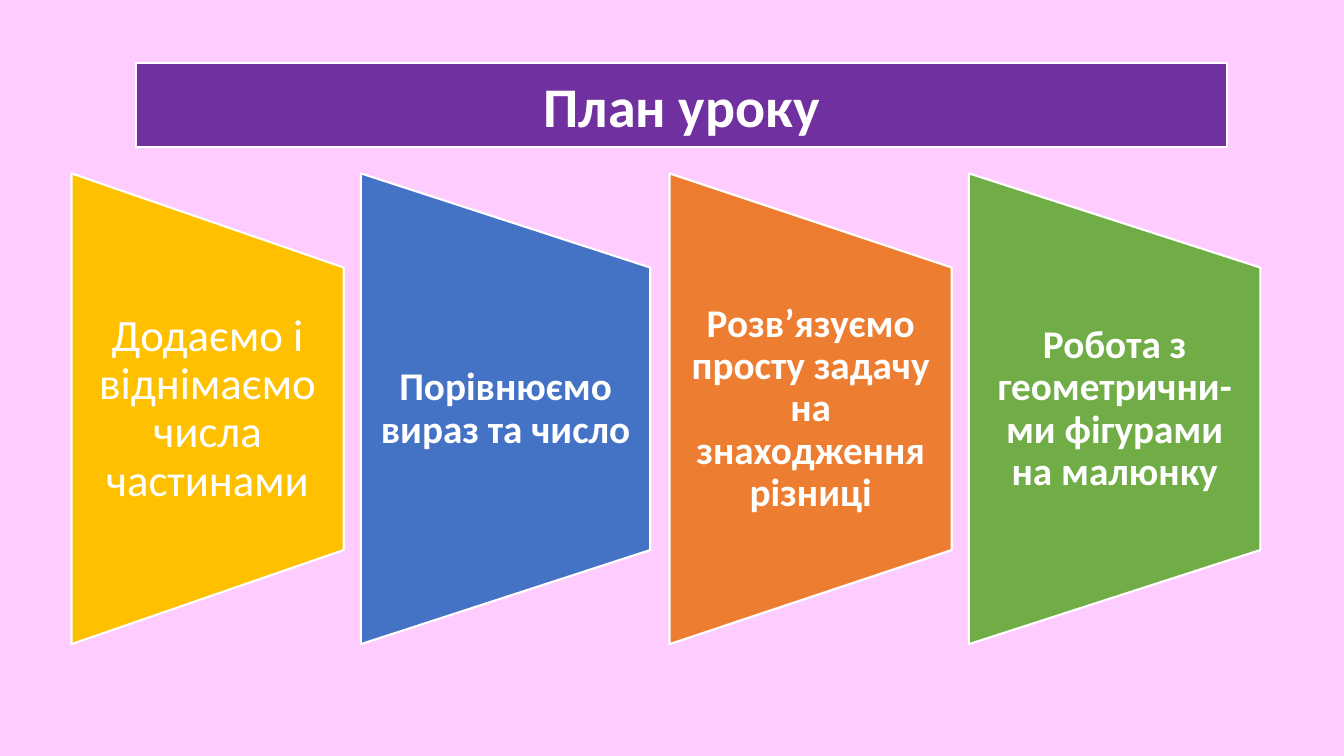
from dataclasses import dataclass

from pptx import Presentation
from pptx.dml.color import RGBColor
from pptx.enum.shapes import MSO_SHAPE
from pptx.enum.text import MSO_ANCHOR, MSO_AUTO_SIZE, PP_ALIGN
from pptx.util import Pt

PX = 9144  # EMU in one px: 100 px to the inch
TRAPEZOID = MSO_SHAPE.FLOWCHART_MANUAL_OPERATION
CENTER = PP_ALIGN.CENTER
MIDDLE = MSO_ANCHOR.MIDDLE
FIT_SHAPE = MSO_AUTO_SIZE.SHAPE_TO_FIT_TEXT
TITLE_ONLY = 5


@dataclass(frozen=True)
class Theme:
    font: str = "Calibri"
    background: str = "FFCCFF"
    banner: str = "7030A0"
    white: str = "FFFFFF"
    yellow: str = "FFC000"
    blue: str = "4472C4"
    orange: str = "ED7D31"
    green: str = "70AD47"
    title_size: int = 40
    large_size: int = 32
    step_size: int = 28
    outline: float = 1.5


THEME = Theme()
PANEL_TOP, PANEL_HEIGHT = 172, 467
TEXT_TOP, TEXT_HEIGHT = 266, 280

# left, width, colour, text, size, bold, side inset
STEPS = [
    (71, 270, THEME.yellow, "Додаємо і віднімаємо числа частинами",
     THEME.large_size, False, 22),
    (358, 287, THEME.blue, "Порівнюємо вираз та число",
     THEME.step_size, True, 19),
    (664, 280, THEME.orange, "Розв’язуємо просту задачу на знаходження різниці",
     THEME.step_size, True, 19),
    (961, 289, THEME.green, "Робота з геометрични-ми фігурами на малюнку",
     THEME.step_size, True, 19),
]


def px(*lengths):
    return [round(length * PX) for length in lengths]


def set_all(target, values):
    for name, value in values.items():
        setattr(target, name, value)


def paint(s, colour):
    """Give a shape its fill and the white outline."""
    s.fill.solid()
    s.fill.fore_color.rgb = RGBColor.from_string(colour)
    s.line.color.rgb = RGBColor.from_string(THEME.white)
    s.line.width = Pt(THEME.outline)


def write(tf, text, size, bold, frame_format, line_spacing):
    set_all(tf, {"word_wrap": True, "vertical_anchor": MIDDLE, **frame_format})
    p = tf.paragraphs[0]
    set_all(p, {"alignment": CENTER, "line_spacing": line_spacing})
    r = p.add_run()
    r.text = text
    set_all(r.font, {"name": THEME.font, "size": Pt(size), "bold": bold})
    r.font.color.rgb = RGBColor.from_string(THEME.white)


def add_title(slide, text):
    s = slide.shapes.title
    left, top, width, height = px(135, 66, 1082, 77)
    set_all(s, {"left": left, "top": top, "width": width, "height": height})
    paint(s, THEME.banner)
    write(s.text_frame, text, THEME.title_size, True,
          {"auto_size": FIT_SHAPE}, 1.0)


def add_panel(slide, left, width, colour):
    """Add a trapezoid turned so that its wide side faces left."""
    shift = (PANEL_HEIGHT - width) / 2
    s = slide.shapes.add_shape(
        TRAPEZOID, *px(left - shift, PANEL_TOP + shift, PANEL_HEIGHT, width))
    s.rotation = 270
    s.shadow.inherit = False
    paint(s, colour)


def add_step(slide, left, width, colour, text, size, bold, inset):
    add_panel(slide, left, width, colour)
    box = slide.shapes.add_textbox(*px(left, TEXT_TOP, width, TEXT_HEIGHT))
    side = inset * PX
    margins = {"margin_left": side, "margin_right": side,
               "margin_top": 0, "margin_bottom": 0}
    write(box.text_frame, text, size, bold, margins, 0.9)


def main():
    prs = Presentation()
    prs.slide_width, prs.slide_height = px(1333, 750)
    slide = prs.slides.add_slide(prs.slide_layouts[TITLE_ONLY])
    fill = slide.background.fill
    fill.solid()
    fill.fore_color.rgb = RGBColor.from_string(THEME.background)
    add_title(slide, "План уроку")
    for step in STEPS:
        add_step(slide, *step)
    prs.save("out.pptx")


if __name__ == "__main__":
    main()
